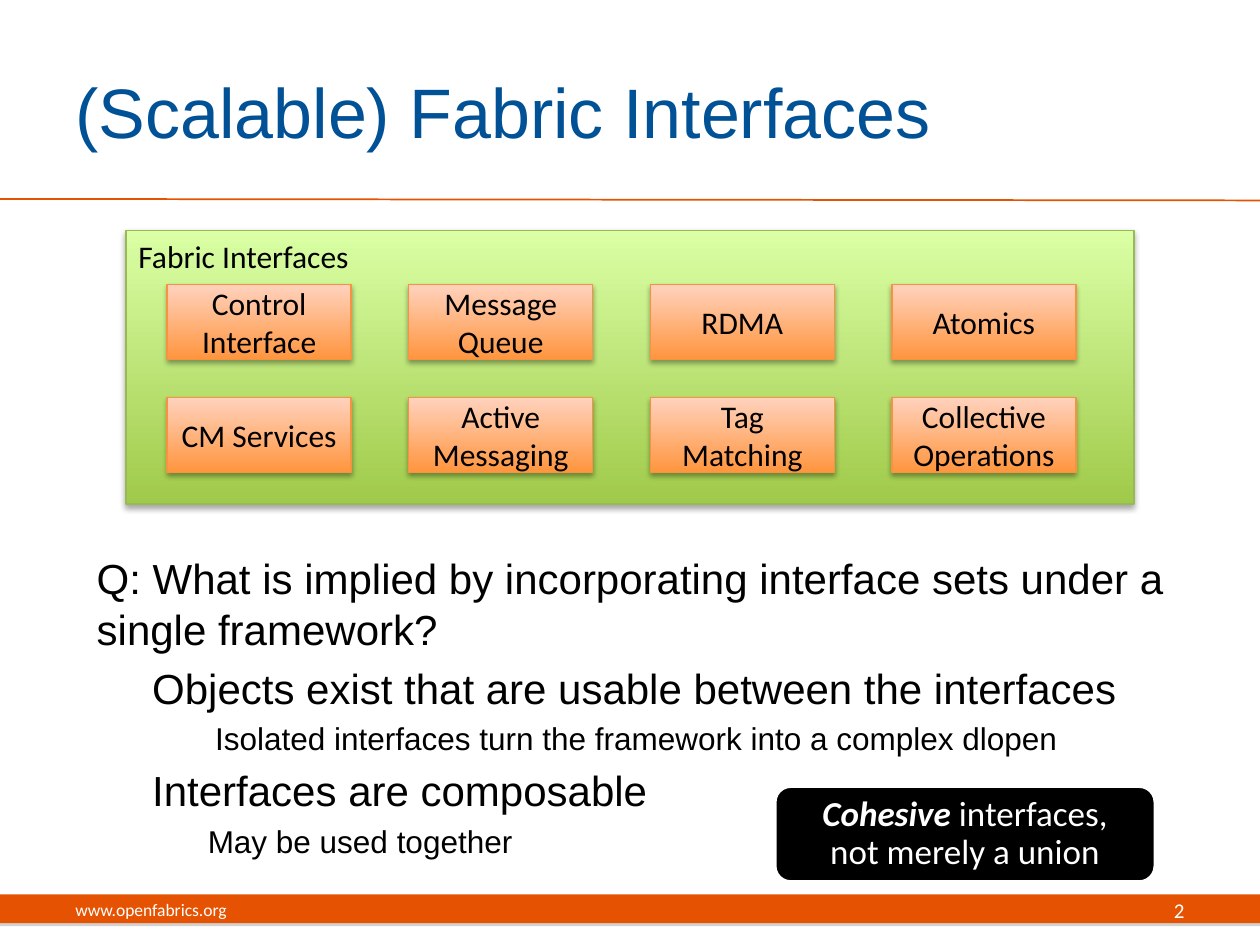
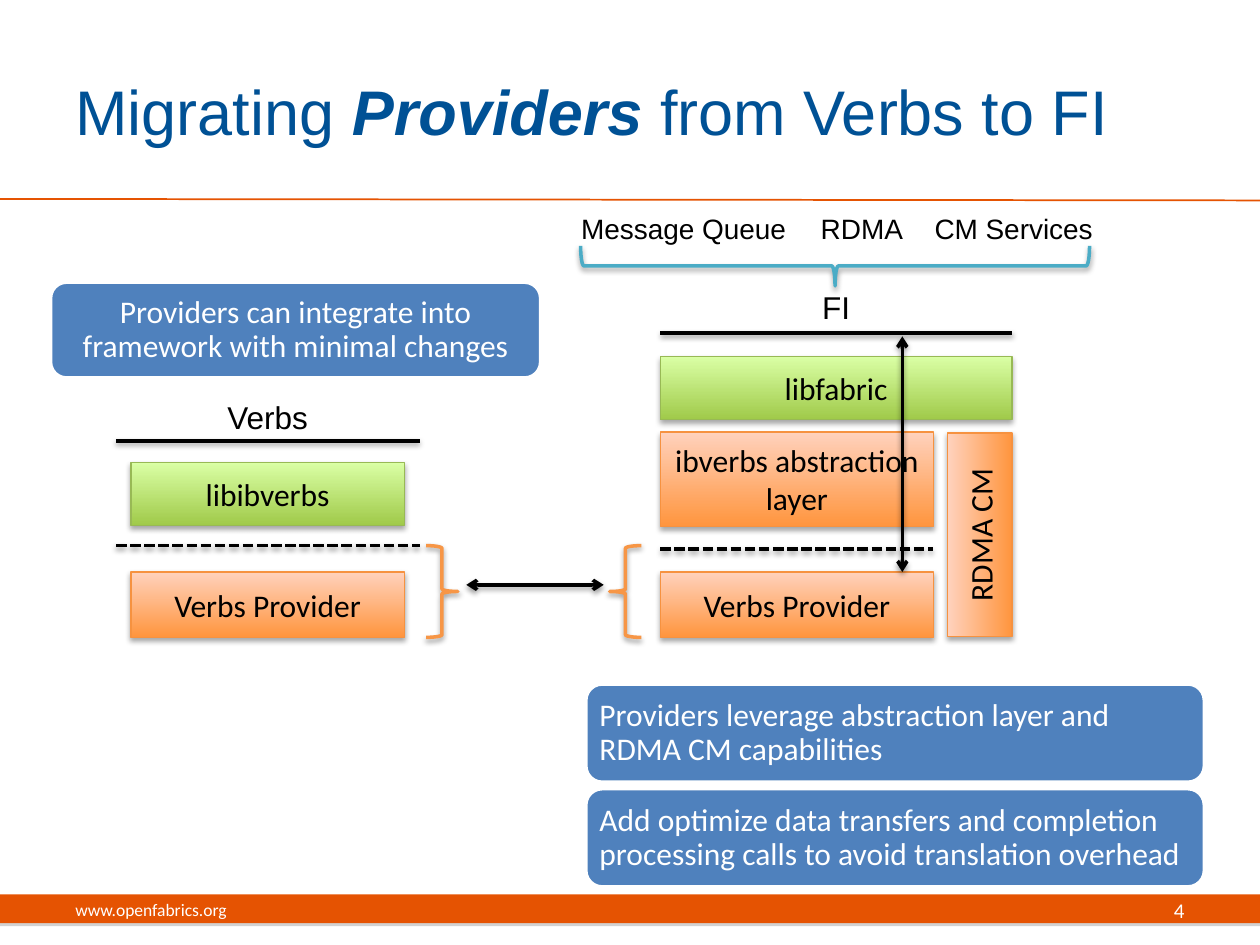
from lxml import etree
from pptx import Presentation
from pptx import util as u
from pptx.dml.color import RGBColor
from pptx.enum import dml, shapes, text
from pptx.oxml.ns import qn

ORANGE, BLUE, BLACK, WHITE = "E55302", "005195", "000000", "FFFFFF"
CALLOUT_BLUE, TEAL, BRACE_ORANGE = "4F81BD", "4BACC6", "F79646"
GREEN_BOX = ("A0CA4A", "DAFFA5", "98B955")
ORANGE_BOX = ("FF953E", "FFD2BD", "F69240")
BOX_SHADOW = (BLACK, 35, 3.1, 1.8)
LINE_SHADOW = (BLACK, 38, 3.1, 1.6)
BAND_SHADOW = ("808080", 35, 0, 1.8)

LEFT, CENTER, RIGHT = text.PP_ALIGN.LEFT, text.PP_ALIGN.CENTER, text.PP_ALIGN.RIGHT
TOP, MIDDLE = text.MSO_ANCHOR.TOP, text.MSO_ANCHOR.MIDDLE
SHAPE = shapes.MSO_SHAPE

SITE = "www.openfabrics.org"

INTERFACE_ROWS = [
    [["Control", "Interface"], ["Message Queue"], ["RDMA"], ["Atomics"]],
    [["CM Services"], ["Active Messaging"], ["Tag Matching"], ["Collective Operations"]],
]
QUESTION = [
    ("Q: What is implied by incorporating interface sets under a single framework?", 0, 24),
    ("Objects exist that are usable between the interfaces", 1.12, 24),
    ("Isolated interfaces turn the framework into a complex dlopen", 2.39, 18),
    ("Interfaces are composable", 1.12, 24),
    ("May be used together", 2.24, 18),
]
COHESIVE = [[("Cohesive ", True), ("interfaces,\nnot merely a union", False)]]

VERBS_LEFT, FI_LEFT, STACK_WIDTH, FI_WIDTH = 2.64, 13.31, 5.51, 7.09
PROVIDER_TOP = 11.53
LAYERS = [
    ("libfabric", (FI_LEFT, 7.19, FI_WIDTH, 1.27), GREEN_BOX, 0),
    ("libibverbs", (VERBS_LEFT, 9.32, STACK_WIDTH, 1.27), GREEN_BOX, 0),
    ("RDMA CM", (17.7, 10.13, 4.11, 1.3), ORANGE_BOX, 270),
    ("Verbs Provider", (VERBS_LEFT, PROVIDER_TOP, STACK_WIDTH, 1.32), ORANGE_BOX, 0),
    ("Verbs Provider", (FI_LEFT, PROVIDER_TOP, STACK_WIDTH, 1.32), ORANGE_BOX, 0),
    ("ibverbs abstraction layer", (FI_LEFT, 8.71, STACK_WIDTH, 1.9), ORANGE_BOX, 0),
]
LABELS = [
    ("Message Queue", (11.43, 4.14, 4.7, 0.94), 16),
    ("RDMA", (16.13, 4.14, 2.49, 0.94), 16),
    ("CM Services", (18.49, 4.14, 3.89, 0.94), 16),
    ("FI", (FI_LEFT, 5.69, FI_WIDTH, 1.02), 18),
    ("Verbs", (VERBS_LEFT, 7.9, STACK_WIDTH, 1.02), 18),
]
API_LINES = [(2.34, 8.89, 8.46, 8.89), (FI_LEFT, 6.71, 20.4, 6.71)]
PROVIDER_LINES = [(2.34, 11, 8.46, 11), (FI_LEFT, 11.07, 18.8, 11.07)]
ARROWS = [(9.4, 11.79, 12.17, 11.79), (18.19, 6.78, 18.19, PROVIDER_TOP)]
BRACES = [
    (SHAPE.LEFT_BRACE, (16.43, 0.23, 0.81, 10.26), TEAL, 270),
    (SHAPE.RIGHT_BRACE, (8.59, 11, 0.64, 1.85), BRACE_ORANGE, 0),
    (SHAPE.LEFT_BRACE, (12.29, 11, 0.64, 1.85), BRACE_ORANGE, 0),
]
REMARKS = [
    ("Providers can integrate into framework with minimal changes",
     (1.02, 5.69, 9.88, 1.93), CENTER),
    ("Providers leverage abstraction layer and RDMA CM capabilities",
     (11.81, 13.79, 12.47, 1.98), LEFT),
    ("Add optimize data transfers and completion processing calls to avoid translation overhead",
     (11.81, 15.9, 12.47, 1.98), LEFT),
]


def rgb(color):
    return RGBColor.from_string(color)


def cm(lengths):
    return [u.Cm(length) for length in lengths]


def set_shadow(part, shadow=None):
    properties = part._element.spPr
    for old in properties.findall(qn("a:effectLst")):
        properties.remove(old)
    effects = etree.SubElement(properties, qn("a:effectLst"))
    if shadow:
        color, alpha, blur, distance = shadow
        outer = etree.SubElement(effects, qn("a:outerShdw"), blurRad=str(u.Pt(blur)),
                                 dist=str(u.Pt(distance)), dir="5400000", rotWithShape="0")
        tone = etree.SubElement(outer, qn("a:srgbClr"), val=color)
        etree.SubElement(tone, qn("a:alpha"), val=str(alpha * 1000))


def add_runs(paragraph, runs, size, color, font):
    for words, emphasis in runs:
        for index, line in enumerate(words.split("\n")):
            if index:
                paragraph.add_line_break()
            run = paragraph.add_run()
            run.text = line
            run.font.name, run.font.size = font, u.Pt(size)
            run.font.color.rgb = rgb(color)
            run.font.bold = run.font.italic = emphasis


def write(part, paragraphs, size, color=BLACK, font="Calibri", align=CENTER,
          anchor=MIDDLE, spacing=None, inset=None):
    frame = part.text_frame
    frame.word_wrap, frame.vertical_anchor = True, anchor
    if inset:
        frame.margin_left = frame.margin_right = u.Cm(inset)
        frame.margin_top = frame.margin_bottom = u.Cm(inset)
    for index, content in enumerate(paragraphs):
        paragraph = frame.add_paragraph() if index else frame.paragraphs[0]
        paragraph.alignment = align
        if spacing:
            paragraph.line_spacing = spacing
        runs = [(content, False)] if isinstance(content, str) else content
        add_runs(paragraph, runs, size, color, font)


def add_label(slide, place, paragraphs, size, **style):
    write(slide.shapes.add_textbox(*cm(place)), paragraphs, size, **style)


def add_box(slide, place, look, paragraphs, rotation=0, **style):
    dark, light, edge = look
    box = slide.shapes.add_shape(SHAPE.RECTANGLE, *cm(place))
    box.rotation = rotation
    box.fill.gradient()
    box.fill.gradient_angle = 90
    for stop, color in zip(box.fill.gradient_stops, (dark, light)):
        stop.color.rgb = rgb(color)
    for stop, position in zip(box.fill.gradient_stops, (0, 1)):
        stop.position = position
    box.line.color.rgb, box.line.width = rgb(edge), u.Pt(0.75)
    set_shadow(box, BOX_SHADOW)
    write(box, paragraphs, 18, **style)


def add_callout(slide, place, color, paragraphs, size, align, inset):
    callout = slide.shapes.add_shape(SHAPE.ROUNDED_RECTANGLE, *cm(place))
    callout.fill.solid()
    callout.fill.fore_color.rgb = rgb(color)
    callout.line.color.rgb, callout.line.width = rgb(WHITE), u.Pt(2)
    callout.shadow.inherit = False
    write(callout, paragraphs, size, WHITE, align=align, spacing=0.9, inset=inset)


def add_brace(slide, kind, place, color, rotation):
    brace = slide.shapes.add_shape(kind, *cm(place))
    brace.rotation = rotation
    brace.fill.background()
    brace.line.color.rgb, brace.line.width = rgb(color), u.Pt(2)
    set_shadow(brace, LINE_SHADOW)


def add_line(slide, ends, color=BLACK, width=2, dashed=False, arrows=False, shadow=LINE_SHADOW):
    line = slide.shapes.add_connector(shapes.MSO_CONNECTOR.STRAIGHT, *cm(ends))
    line.line.color.rgb, line.line.width = rgb(color), u.Pt(width)
    if dashed:
        line.line.dash_style = dml.MSO_LINE.SQUARE_DOT
    if arrows:
        outline = line._element.spPr.find(qn("a:ln"))
        for end in ("a:headEnd", "a:tailEnd"):
            etree.SubElement(outline, qn(end), type="arrow")
    set_shadow(line, shadow)


def add_page(deck, title, title_size, number):
    slide = deck.slides.add_slide(deck.slide_layouts[6])
    band = slide.shapes.add_shape(SHAPE.RECTANGLE, *cm((0, 18.03, 25.4, 0.58)))
    band.fill.solid()
    band.fill.fore_color.rgb = rgb(ORANGE)
    band.line.fill.background()
    set_shadow(band, BAND_SHADOW)
    add_line(slide, (0, 4.01, 25.4, 4.04), ORANGE, 1, shadow=None)
    add_label(slide, (1.27, 0.64, 21.4, 3.18), [title], title_size,
              color=BLUE, font="Arial", align=LEFT)
    add_label(slide, (1.27, 17.83, 8.05, 1.02), [SITE], 10, color=WHITE, align=LEFT)
    add_label(slide, (18.21, 17.83, 5.92, 1.02), [number], 12, color=WHITE, align=RIGHT)
    return slide


def add_question(slide):
    frame = slide.shapes.add_textbox(*cm((1.7, 11.02, 22.86, 6.99))).text_frame
    frame.word_wrap = True
    for index, (words, indent, size) in enumerate(QUESTION):
        paragraph = frame.add_paragraph() if index else frame.paragraphs[0]
        paragraph._p.get_or_add_pPr().set("marL", str(u.Cm(indent)))
        if index:
            paragraph.space_before = u.Pt(size * 0.2)
        add_runs(paragraph, [(words, False)], size, BLACK, "Arial")


def build_interfaces(deck):
    slide = add_page(deck, "(Scalable) Fabric Interfaces", 40, "2")
    add_question(slide)
    add_box(slide, (2.54, 4.65, 20.32, 5.51), GREEN_BOX, ["Fabric Interfaces"],
            align=LEFT, anchor=TOP)
    for row, names in enumerate(INTERFACE_ROWS):
        for column, name in enumerate(names):
            place = (3.37 + 4.87 * column, 5.74 + 2.28 * row, 3.71, 1.51)
            add_box(slide, place, ORANGE_BOX, name)
    add_callout(slide, (15.62, 15.85, 7.67, 1.93), BLACK, COHESIVE, 20, CENTER, 0.2)


def build_migration(deck):
    title = [("Migrating ", False), ("Providers", True), (" from Verbs to FI", False)]
    slide = add_page(deck, title, 36, "4")
    for name, place, look, rotation in LAYERS:
        add_box(slide, place, look, [name], rotation)
    for name, place, size in LABELS:
        add_label(slide, place, [name], size, font="Arial", anchor=TOP)
    for brace in BRACES:
        add_brace(slide, *brace)
    for ends in API_LINES:
        add_line(slide, ends)
    for ends in PROVIDER_LINES:
        add_line(slide, ends, dashed=True)
    for ends in ARROWS:
        add_line(slide, ends, arrows=True)
    for words, place, align in REMARKS:
        add_callout(slide, place, CALLOUT_BLUE, [words], 18, align, 0.18)


def main():
    deck = Presentation()
    deck.slide_width, deck.slide_height = cm((25.4, 19.05))
    build_interfaces(deck)
    build_migration(deck)
    deck.save("out.pptx")


if __name__ == "__main__":
    main()
